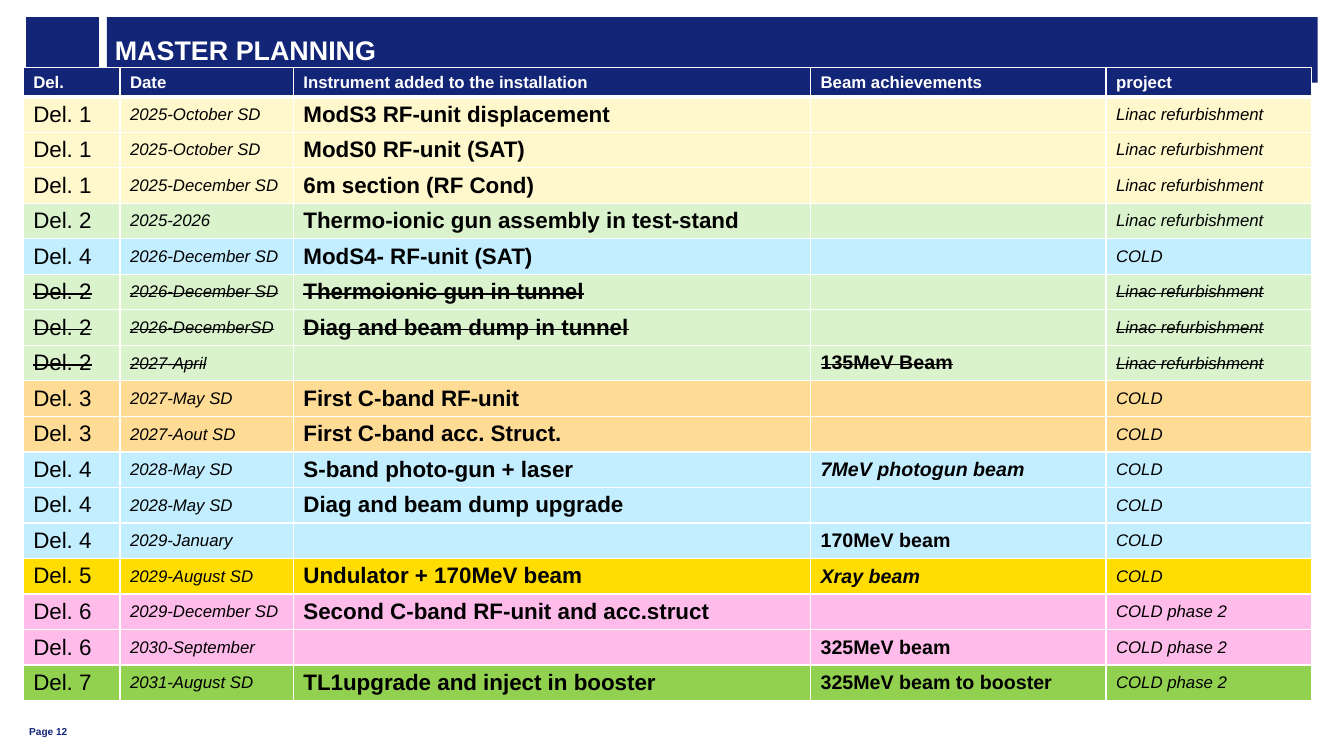
from lxml.etree import SubElement
from pptx import Presentation
from pptx.dml.color import RGBColor
from pptx.enum.shapes import MSO_SHAPE as Shape
from pptx.enum.text import MSO_ANCHOR as Anchor, PP_ALIGN as Align
from pptx.oxml.ns import qn
from pptx.util import Inches, Pt

NAVY = RGBColor(0x13, 0x25, 0x77)
WHITE = RGBColor(0xFF, 0xFF, 0xFF)
BLACK = RGBColor(0x00, 0x00, 0x00)
CREAM = RGBColor(0xFF, 0xF8, 0xCC)
MINT = RGBColor(0xDA, 0xF3, 0xCD)
SKY = RGBColor(0xC3, 0xEE, 0xFF)
ORANGE = RGBColor(0xFF, 0xDC, 0x95)
YELLOW = RGBColor(0xFF, 0xDD, 0x00)
PINK = RGBColor(0xFF, 0xBC, 0xEB)
GREEN = RGBColor(0x92, 0xD0, 0x50)

LINAC, COLD, PHASE2 = "Linac refurbishment", "COLD", "COLD phase 2"
DELIVERY_FILLS = {1: CREAM, 2: MINT, 3: ORANGE, 4: SKY, 5: YELLOW, 6: PINK, 7: GREEN}
HEADERS = ["Del.", "Date", "Instrument added to the installation",
           "Beam achievements", "project"]
COLUMN_WIDTHS = [0.96, 1.72, 5.13, 2.93, 2.04]
HEADER_HEIGHT, ROW_HEIGHT = 0.29, 0.3525
# Size, bold and italic for each column
COLUMN_STYLES = [(16, False, False), (12, False, True), (16, True, False),
                 (14, True, False), (12, False, True)]
MILESTONES = [
    (1, "2025-October SD", "ModS3 RF-unit displacement", "", LINAC),
    (1, "2025-October SD", "ModS0 RF-unit (SAT)", "", LINAC),
    (1, "2025-December SD", "6m section (RF Cond)", "", LINAC),
    (2, "2025-2026", "Thermo-ionic gun assembly in test-stand", "", LINAC),
    (4, "2026-December SD", "ModS4- RF-unit (SAT)", "", COLD),
    (2, "2026-December SD", "Thermoionic gun in tunnel", "", LINAC),
    (2, "2026-DecemberSD", "Diag and beam dump in tunnel", "", LINAC),
    (2, "2027-April", "", "135MeV Beam", LINAC),
    (3, "2027-May SD", "First C-band RF-unit", "", COLD),
    (3, "2027-Aout SD", "First C-band acc. Struct.", "", COLD),
    (4, "2028-May SD", "S-band photo-gun + laser", "7MeV photogun beam", COLD),
    (4, "2028-May SD", "Diag and beam dump upgrade", "", COLD),
    (4, "2029-January", "", "170MeV beam", COLD),
    (5, "2029-August SD", "Undulator + 170MeV beam", "Xray beam", COLD),
    (6, "2029-December SD", "Second C-band RF-unit and acc.struct", "", PHASE2),
    (6, "2030-September", "", "325MeV beam", PHASE2),
    (7, "2031-August SD", "TL1upgrade and inject in booster",
     "325MeV beam to booster", PHASE2),
]
CANCELLED_ROWS = range(6, 9)
ITALIC_BEAMS = {"7MeV photogun beam", "Xray beam"}


def write(para, text, size, color, bold=True, italic=False):
    para.text = text
    para.alignment = Align.LEFT
    font = para.font
    font.name, font.size = "Arial", Pt(size)
    font.bold, font.italic = bold, italic
    font.color.rgb = color


def fill_cell(cell, fill, text, *style):
    cell.margin_top = cell.margin_bottom = Inches(0.03)
    cell.vertical_anchor = Anchor.MIDDLE
    para = cell.text_frame.paragraphs[0]
    write(para, text, *style)
    if not text:
        SubElement(para._p, qn("a:endParaRPr"), sz="1200")
    if fill == NAVY:
        border = SubElement(cell._tc.get_or_add_tcPr(), qn("a:lnB"), w=str(Pt(3)))
        paint = SubElement(border, qn("a:solidFill"))
        SubElement(paint, qn("a:srgbClr"), val=str(WHITE))
    cell.fill.solid()
    cell.fill.fore_color.rgb = fill


deck = Presentation()
deck.slide_width, deck.slide_height = Inches(13.33), Inches(7.5)
page = deck.slides.add_slide(deck.slide_layouts[6])

# Title band
for left, width in [(0.26, 0.72), (1.06, 12.01)]:
    band = page.shapes.add_shape(Shape.RECTANGLE, Inches(left), Inches(0.17),
                                 Inches(width), Inches(0.65))
    band.shadow.inherit = False
    band.fill.solid()
    band.fill.fore_color.rgb = NAVY
    band.line.fill.background()
title = band.text_frame
title.margin_left = title.margin_right = Inches(0.08)
title.margin_top = title.margin_bottom = 0
title.vertical_anchor = Anchor.MIDDLE
write(title.paragraphs[0], "MASTER PLANNING", 19.2, WHITE)

# Page number
footer = page.shapes.add_textbox(Inches(0.29), Inches(7.09), Inches(0.6), Inches(0.23)).text_frame
footer.margin_left = footer.margin_right = footer.margin_top = footer.margin_bottom = 0
footer.word_wrap = True
footer.vertical_anchor = Anchor.BOTTOM
write(footer.paragraphs[0], "Page 12", 7.2, NAVY)

# Planning table
planning = page.shapes.add_table(
    len(MILESTONES) + 1, len(HEADERS), Inches(0.23), Inches(0.67),
    Inches(sum(COLUMN_WIDTHS)),
    Inches(HEADER_HEIGHT + ROW_HEIGHT * len(MILESTONES))).table
planning.horz_banding = False
for column, width in zip(planning.columns, COLUMN_WIDTHS):
    column.width = Inches(width)
for row in planning.rows:
    row.height = Inches(ROW_HEIGHT)
planning.rows[0].height = Inches(HEADER_HEIGHT)

for column, header in enumerate(HEADERS):
    fill_cell(planning.cell(0, column), NAVY, header, 12, WHITE)

for row, (delivery, *details) in enumerate(MILESTONES, start=1):
    texts = [f"Del. {delivery}", *details]
    for column, (text, (size, bold, italic)) in enumerate(zip(texts, COLUMN_STYLES)):
        cell = planning.cell(row, column)
        fill_cell(cell, DELIVERY_FILLS[delivery], text, size, BLACK, bold,
                  italic or text in ITALIC_BEAMS)
        if row in CANCELLED_ROWS:
            for span in cell.text_frame.paragraphs[0].runs:
                span._r.get_or_add_rPr().set("strike", "sngStrike")

deck.save("out.pptx")
